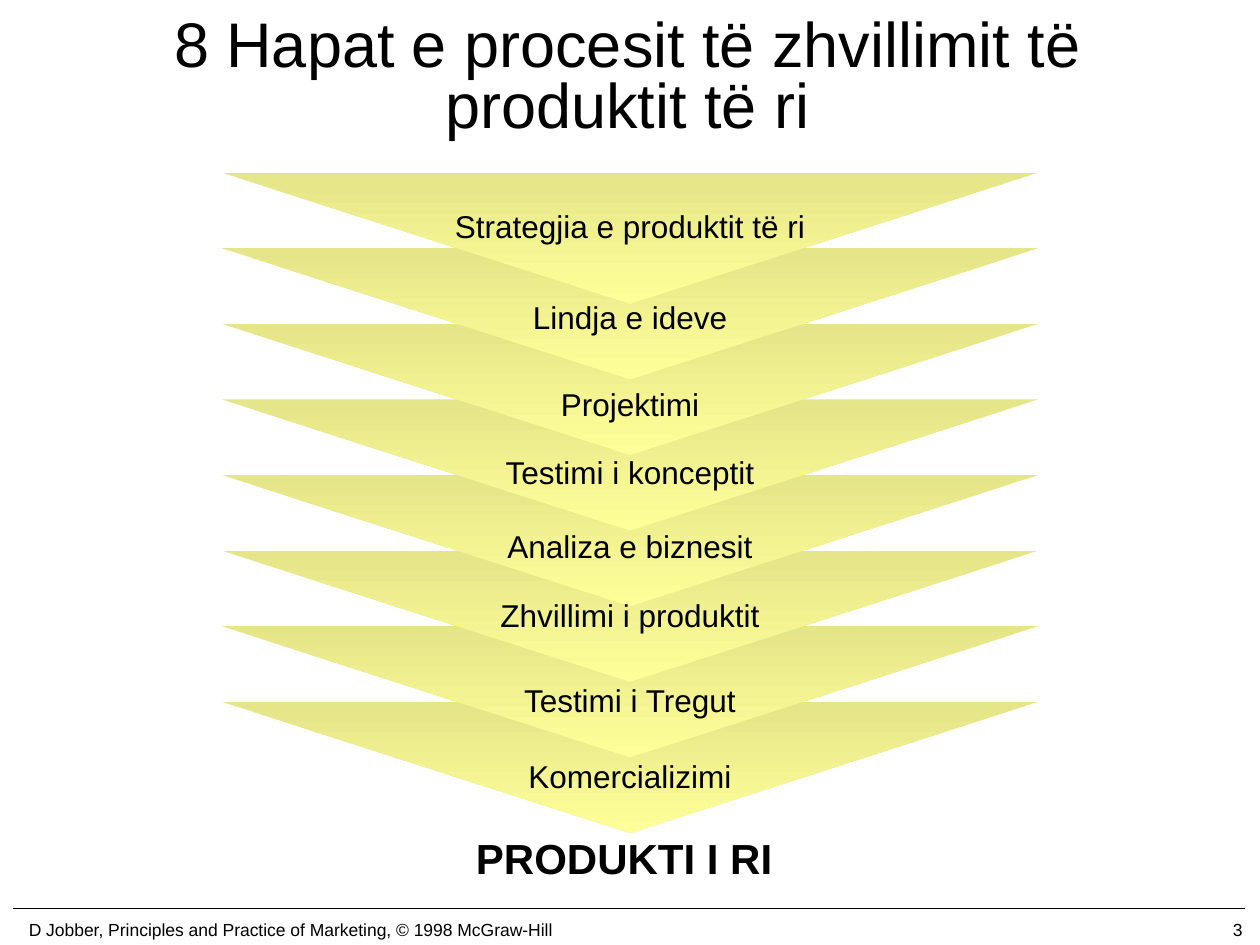
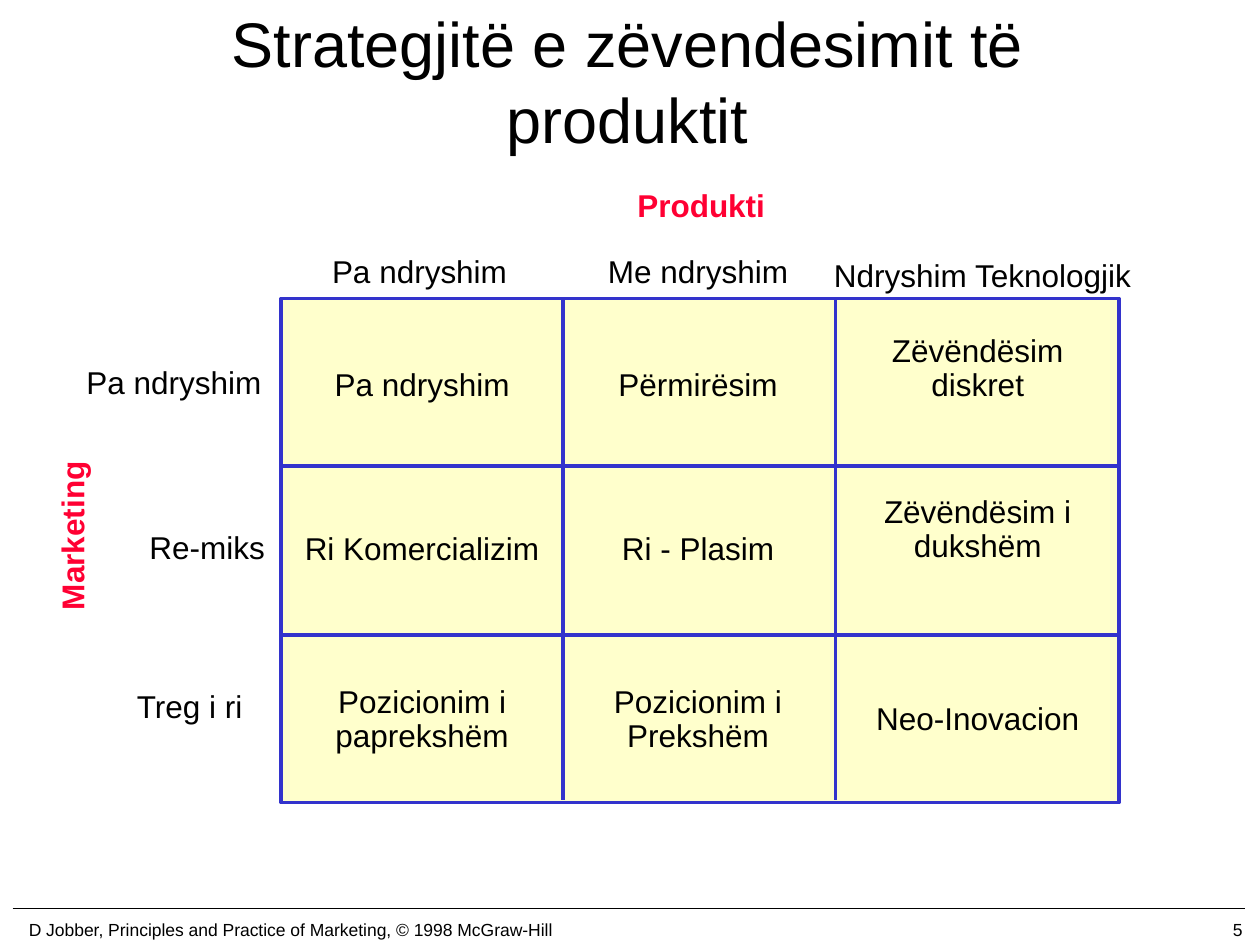
from pptx import Presentation
from pptx.dml.color import RGBColor
from pptx.enum.shapes import MSO_CONNECTOR, MSO_SHAPE
from pptx.enum.text import MSO_ANCHOR, MSO_AUTO_SIZE, PP_ALIGN
from pptx.oxml.ns import qn
from pptx.util import Inches, Pt
from lxml.etree import SubElement

BLACK = RGBColor(0x00, 0x00, 0x00)
RED = RGBColor(0xFF, 0x00, 0x33)
BLUE = RGBColor(0x33, 0x33, 0xCC)
CREAM = RGBColor(0xFF, 0xFF, 0xCC)
OLIVE = RGBColor(0xE5, 0xE5, 0x89)
YELLOW = RGBColor(0xFF, 0xFF, 0x99)
FONT = "Arial"
CREDIT = "D Jobber, Principles and Practice of Marketing, © 1998 McGraw-Hill"
LEFT, MID, RIGHT = PP_ALIGN.LEFT, PP_ALIGN.CENTER, PP_ALIGN.RIGHT


class Deck:
    def __init__(self):
        self.file = Presentation()
        self.file.slide_width = Inches(10)
        self.file.slide_height = Inches(7.5)
        self.slide = None

    def page(self, title, number, space=None):
        self.slide = self.file.slides.add_slide(self.file.slide_layouts[6])
        self.line(0.1, 7.21, 9.88, 7.21, BLACK, 1)
        self.text(number, 7.88, 7.25, 2.08, 0.25, size=10, align=RIGHT, fixed=True)
        self.text(CREDIT, 0, 7.25, 4.61, 0.25, size=10, fixed=True)
        self.text(title, 0.73, 0.01, 8.5, 1.25, size=36, wrap=True,
                  space=space, fixed=True)

    def text(self, words, x, y, w, h=0.4, size=18, color=BLACK, bold=False,
             align=MID, wrap=False, space=None, fixed=False, turn=0):
        box = self.slide.shapes.add_textbox(Inches(x), Inches(y), Inches(w), Inches(h))
        box.rotation = turn
        frame = box.text_frame
        frame.word_wrap = wrap
        if fixed:
            frame.auto_size = MSO_AUTO_SIZE.NONE
            frame.vertical_anchor = MSO_ANCHOR.MIDDLE
        else:
            frame.auto_size = MSO_AUTO_SIZE.SHAPE_TO_FIT_TEXT
        para = frame.paragraphs[0]
        para.text = words
        para.alignment = align
        para.line_spacing = space
        para.font.name = FONT
        para.font.size = Pt(size)
        para.font.bold = bold
        para.font.color.rgb = color

    def line(self, x1, y1, x2, y2, color, width):
        line = self.slide.shapes.add_connector(
            MSO_CONNECTOR.STRAIGHT, Inches(x1), Inches(y1), Inches(x2), Inches(y2))
        line.line.color.rgb = color
        line.line.width = Pt(width)
        SubElement(line._element.spPr, qn("a:effectLst"))

    def shape(self, kind, x, y, w, h):
        shape = self.slide.shapes.add_shape(kind, Inches(x), Inches(y), Inches(w), Inches(h))
        shape.shadow.inherit = False
        return shape

    def panel(self, x, y, w, h):
        panel = self.shape(MSO_SHAPE.RECTANGLE, x, y, w, h)
        panel.fill.solid()
        panel.fill.fore_color.rgb = CREAM
        panel.line.color.rgb = BLUE
        panel.line.width = Pt(2)

    def funnel(self, x, y, w, h):
        funnel = self.shape(MSO_SHAPE.ISOSCELES_TRIANGLE, x, y, w, h)
        funnel.rotation = 180
        funnel.line.fill.background()
        funnel.fill.gradient()
        funnel.fill.gradient_angle = 270
        for stop, color in zip(funnel.fill.gradient_stops, (OLIVE, YELLOW)):
            stop.color.rgb = color
        funnel._element.spPr.find(qn("a:gradFill")).set("rotWithShape", "0")


def steps(deck):
    deck.page("8 Hapat e procesit të zhvillimit të produktit të ri", "3", 0.8)
    labels = [
        ("Strategjia e produktit të ri", 1.59, 3.05),
        ("Lindja e ideve", 2.32, 1.76),
        ("Projektimi", 3.01, 1.31),
        ("Testimi i konceptit", 3.55, 2.19),
        ("Analiza e biznesit", 4.13, 2.16),
        ("Zhvillimi i produktit", 4.68, 2.27),
        ("Testimi i Tregut", 5.36, 1.9),
        ("Komercializimi", 5.96, 1.83),
    ]
    for row in reversed(range(len(labels))):
        deck.funnel(1.76, 1.37 + 0.6 * row, 6.48, 1.04)
    for words, top, width in labels:
        deck.text(words, 5 - width / 2, top, width)
    deck.text("PRODUKTI I RI ", 3.67, 6.56, 2.66, 0.5, size=24, bold=True)


def matrix(deck):
    deck.page("Strategjitë e zëvendesimit të produktit", "5")
    deck.panel(2.23, 2.37, 6.65, 4)
    for y in (3.7, 5.04):
        deck.line(2.24, y, 8.87, y, BLUE, 2)
    for x in (4.47, 6.63):
        deck.line(x, 2.37, x, 6.35, BLUE, 2)

    cols = [(2.23, 2.24), (4.46, 2.16), (6.63, 2.26)]
    rows = [
        [("Pa ndryshim", 2.88), ("Përmirësim", 2.88), ("Zëvëndësim diskret", 2.61)],
        [("Ri Komercializim", 4.18), ("Ri - Plasim", 4.18), ("Zëvëndësim i dukshëm", 3.89)],
        [("Pozicionim i paprekshëm", 5.4), ("Pozicionim i Prekshëm", 5.4),
         ("Neo-Inovacion", 5.53)],
    ]
    for row in rows:
        for (words, top), (left, width) in zip(row, cols):
            tall = 0.64 if "Zëvë" in words or "Poz" in words else 0.38
            deck.text(words, left, top, width, tall, wrap=True, space=0.9)

    deck.text("Pa ndryshim", 2.21, 1.95, 2.24, wrap=True)
    deck.text("Me ndryshim", 4.45, 1.95, 2.18, wrap=True)
    deck.text("Ndryshim Teknologjik", 6.52, 1.98, 2.58, align=LEFT)
    for words, left, top, width in [("Pa ndryshim", 0.58, 2.83, 1.6),
                                    ("Re-miks", 1.08, 4.14, 1.13),
                                    ("Treg i ri", 0.73, 5.4, 1.55)]:
        deck.text(words, left, top, width)
    deck.text("Marketing", -0.12, 4.05, 1.38, color=RED, bold=True, align=LEFT, turn=270)
    deck.text("Produkti", 4.96, 1.43, 1.22, color=RED, bold=True, align=LEFT)


def main():
    deck = Deck()
    steps(deck)
    matrix(deck)
    deck.file.save("out.pptx")


if __name__ == "__main__":
    main()
